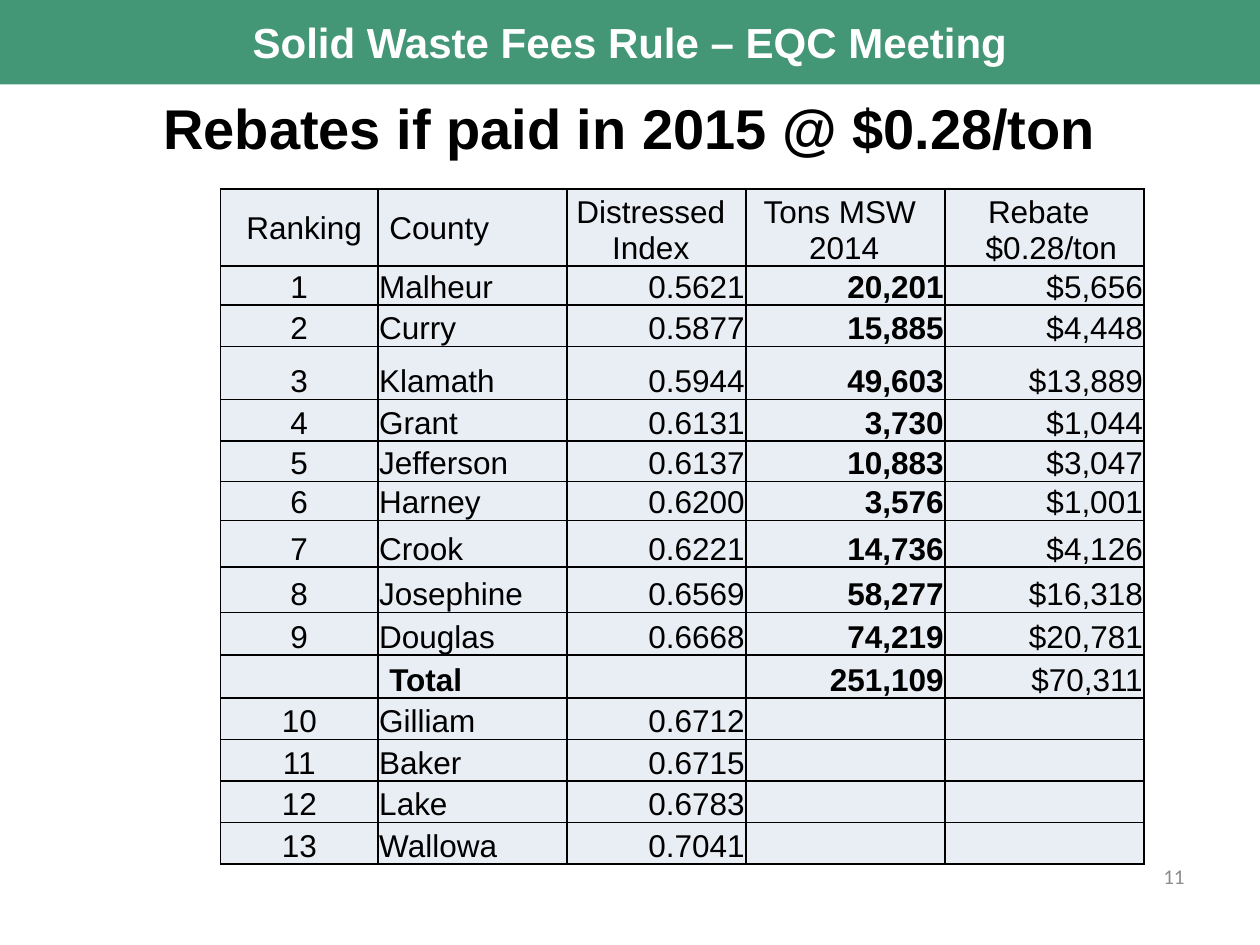
"""Build the county rebate slide."""
from dataclasses import dataclass

from lxml.etree import SubElement
from pptx import Presentation
from pptx.dml.color import RGBColor as Color
from pptx.enum.shapes import MSO_SHAPE as Shape
from pptx.enum.text import MSO_ANCHOR as Anchor, PP_ALIGN as Align
from pptx.oxml.ns import qn
from pptx.util import Inches, Pt


@dataclass(frozen=True)
class Theme:
    """Colours, fonts and type sizes of the slide."""
    green: str = "439777"
    white: str = "FFFFFF"
    black: str = "000000"
    grey: str = "8C8C8C"
    cell: str = "E9EDF4"
    font: str = "Arial"
    number_font: str = "Calibri"
    banner_size: int = 24
    title_size: int = 32
    table_size: int = 18
    number_size: int = 12


THEME = Theme()
WIDTH, HEIGHT = 10, 7.5
BAND = 0.67
COLUMN_WIDTHS = (1.25, 1.5, 1.42, 1.58, 1.58)
ROW_HEIGHTS = (0.58, 0.31, 0.33, 0.42, 0.33, 0.32, 0.3, 0.37, 0.36, 0.34, 0.34) + (0.33,) * 4
COLUMN_ALIGNS = (Align.CENTER, Align.LEFT, Align.RIGHT, Align.RIGHT, Align.RIGHT)
COUNTY, TONS = 1, 3
SECOND_LINE_INDENTS = {3: 0.07, 4: 0.2}
HEADERS = ("Ranking", "County", "Distressed Index", "Tons MSW\n2014", "Rebate\n$0.28/ton")
ROWS = (
    ("1", "Malheur", "0.5621", "20,201", "$5,656"),
    ("2", "Curry", "0.5877", "15,885", "$4,448"),
    ("3", "Klamath", "0.5944", "49,603", "$13,889"),
    ("4", "Grant", "0.6131", "3,730", "$1,044"),
    ("5", "Jefferson", "0.6137", "10,883", "$3,047"),
    ("6", "Harney", "0.6200", "3,576", "$1,001"),
    ("7", "Crook", "0.6221", "14,736", "$4,126"),
    ("8", "Josephine", "0.6569", "58,277", "$16,318"),
    ("9", "Douglas", "0.6668", "74,219", "$20,781"),
    ("", "Total", "", "251,109", "$70,311"),
    ("10", "Gilliam", "0.6712", "", ""),
    ("11", "Baker", "0.6715", "", ""),
    ("12", "Lake", "0.6783", "", ""),
    ("13", "Wallowa", "0.7041", "", ""),
)


def write_text(text_frame, text, size, color, align, bold=False, font=THEME.font):
    """Set the text and format every run alike."""
    text_frame.text = text
    for paragraph in text_frame.paragraphs:
        paragraph.alignment = align
        for run in paragraph.runs:
            run.font.name, run.font.size, run.font.bold = font, Pt(size), bold
            run.font.color.rgb = Color.from_string(color)


def add_banner(slide, text):
    """Add the full-width coloured band."""
    shape = slide.shapes.add_shape(Shape.RECTANGLE, 0, 0, Inches(WIDTH), Inches(BAND))
    shape.shadow.inherit = False
    shape.fill.solid()
    shape.fill.fore_color.rgb = Color.from_string(THEME.green)
    shape.line.fill.background()
    shape.text_frame.vertical_anchor = Anchor.MIDDLE
    write_text(shape.text_frame, text, THEME.banner_size, THEME.white, Align.CENTER, True)


def add_label(slide, box, text, *style, **options):
    """Add a wrapped, vertically centred text box."""
    shape = slide.shapes.add_textbox(*map(Inches, box))
    shape.text_frame.word_wrap = True
    shape.text_frame.vertical_anchor = Anchor.MIDDLE
    write_text(shape.text_frame, text, *style, **options)


def add_borders(cell):
    """Draw a one-point line on each side of a cell."""
    properties = cell._tc.get_or_add_tcPr()
    for side in ("a:lnL", "a:lnR", "a:lnT", "a:lnB"):
        line = SubElement(properties, qn(side), w=str(Pt(1)))
        fill = SubElement(line, qn("a:solidFill"))
        SubElement(fill, qn("a:srgbClr"), val=THEME.black)


def fill_cell(cell, text, column, is_header, is_total):
    """Style one cell according to its column and kind of row."""
    add_borders(cell)
    cell.fill.solid()
    cell.fill.fore_color.rgb = Color.from_string(THEME.cell)
    names_row = is_header and column <= COUNTY
    indented = names_row or (is_total and column == COUNTY)
    cell.margin_left = Inches(0.09 if indented else 0.01)
    cell.margin_right = Inches(0.1 if is_header and not names_row else 0.01)
    cell.margin_top, cell.margin_bottom = Inches(0.01), 0
    cell.vertical_anchor = Anchor.MIDDLE if names_row else Anchor.BOTTOM
    align = Align.CENTER if is_header and column != COUNTY else COLUMN_ALIGNS[column]
    bold = not is_header and (column == TONS or (is_total and column == COUNTY))
    write_text(cell.text_frame, text, THEME.table_size, THEME.black, align, bold)
    for paragraph in cell.text_frame.paragraphs[1:]:
        properties = paragraph._p.get_or_add_pPr()
        properties.set("marL", str(Inches(SECOND_LINE_INDENTS[column])))
        properties.set("indent", "0")


def add_rebate_table(slide, left, top):
    """Add the ranking table with its header row."""
    records = (HEADERS, *ROWS)
    frame = slide.shapes.add_table(
        len(records), len(HEADERS), Inches(left), Inches(top),
        Inches(sum(COLUMN_WIDTHS)), Inches(sum(ROW_HEIGHTS)))
    table = frame.table
    table.first_row = table.horz_banding = False
    for column, width in zip(table.columns, COLUMN_WIDTHS):
        column.width = Inches(width)
    for index, (record, height) in enumerate(zip(records, ROW_HEIGHTS)):
        table.rows[index].height = Inches(height)
        for column, text in enumerate(record):
            fill_cell(table.cell(index, column), text, column,
                      index == 0, record[COUNTY] == "Total")


def main():
    """Assemble and save the slide."""
    presentation = Presentation()
    presentation.slide_width, presentation.slide_height = Inches(WIDTH), Inches(HEIGHT)
    slide = presentation.slides.add_slide(presentation.slide_layouts[6])
    add_banner(slide, "Solid Waste Fees Rule – EQC Meeting")
    add_label(slide, (0.05 * WIDTH, BAND, 0.9 * WIDTH, BAND),
              "Rebates if paid in 2015 @ $0.28/ton",
              THEME.title_size, THEME.black, Align.CENTER, bold=True)
    add_rebate_table(slide, 0.175 * WIDTH, 0.2 * HEIGHT)
    add_label(slide, (7.33, 0.9 * HEIGHT, 2.17, 0.4), "11",
              THEME.number_size, THEME.grey, Align.RIGHT, font=THEME.number_font)
    presentation.save("out.pptx")


if __name__ == "__main__":
    main()
